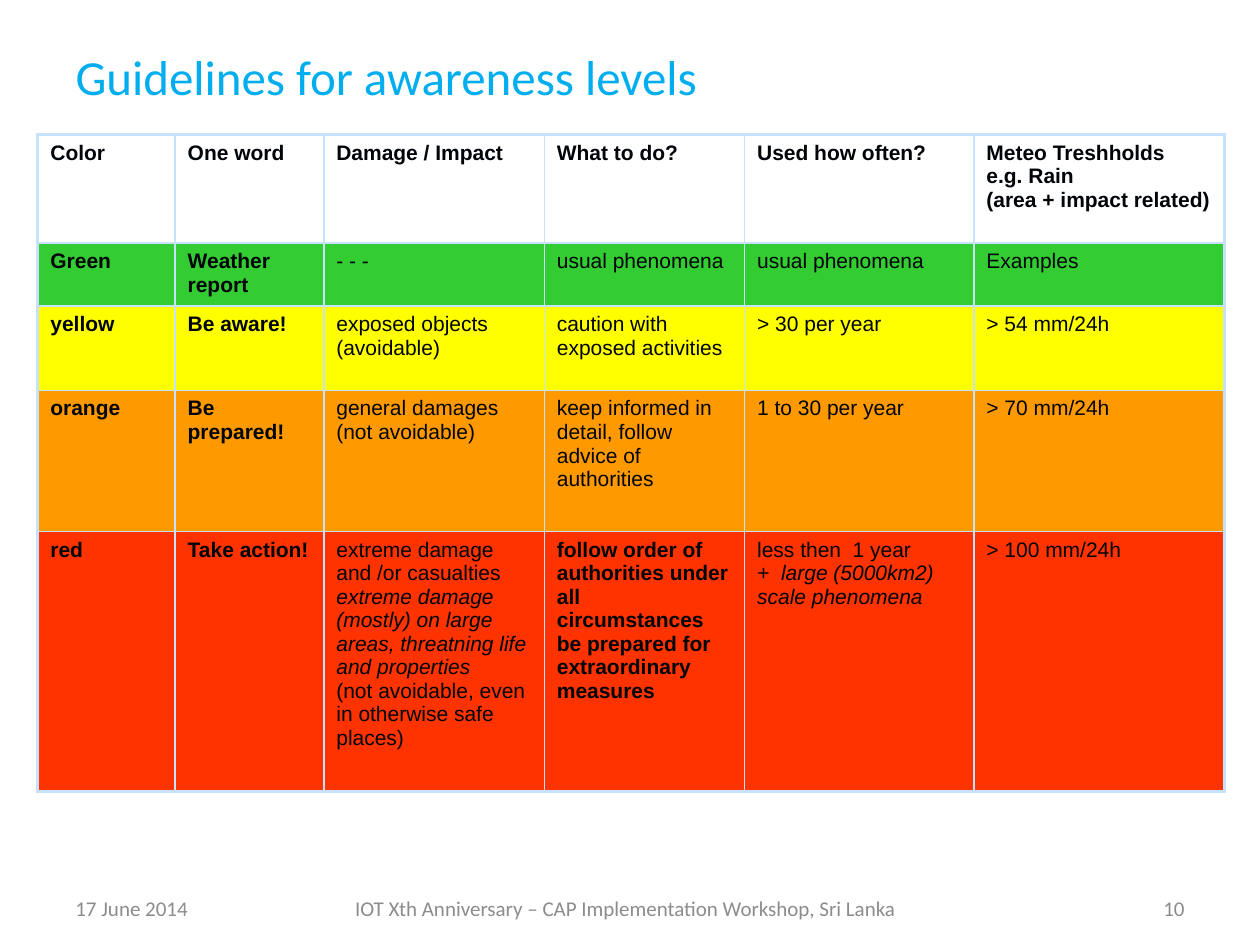
from lxml import etree
from pptx import Presentation
from pptx.dml.color import RGBColor
from pptx.enum.text import MSO_ANCHOR, PP_ALIGN
from pptx.oxml.ns import qn
from pptx.util import Inches, Pt

LEFT, CENTER, RIGHT = PP_ALIGN.LEFT, PP_ALIGN.CENTER, PP_ALIGN.RIGHT
MIDDLE = MSO_ANCHOR.MIDDLE
TITLE_ONLY = 5

MARGIN = 0.5
FOOTER_TOP, FOOTER_HEIGHT = 7.06, 0.29
FOOTERS = [
    (MARGIN, 1.27, "17 June 2014", LEFT),
    (2.01, 5.91, "IOT Xth Anniversary – CAP Implementation Workshop, Sri Lanka", CENTER),
    (8.15, 1.35, "10", RIGHT),
]

TABLE_LEFT, TABLE_TOP = 0.3, 1.07
COLUMN_WIDTHS = [1.09, 1.18, 1.75, 1.59, 1.82, 1.99]
ROW_HEIGHTS = [0.86, 0.49, 0.67, 1.12, 2.06]
ROW_FILLS = [None, "33CC33", "FFFF00", "FF9900", "FF3300"]
BORDER = "C7E2FF"

# Each line of a cell is one paragraph.
CELLS = [
    ["Color", "One word", "Damage / Impact", "What to do?", "Used how often?",
     "Meteo Treshholds\ne.g. Rain\n(area + impact related)"],
    ["Green", "Weather report", "- - -", "usual phenomena", "usual phenomena", "Examples"],
    ["yellow", "Be aware!", "exposed objects\n(avoidable)",
     "caution with exposed activities", "> 30 per year", "> 54 mm/24h"],
    ["orange", "Be prepared!", "general damages\n(not avoidable)",
     "keep informed in detail, follow advice of authorities",
     "1 to 30 per year", "> 70 mm/24h"],
    ["red", "Take action!",
     "extreme damage and /or casualties\n"
     "extreme damage (mostly) on large areas, threatning life and properties\n"
     "(not avoidable, even in otherwise safe places)",
     "follow order of authorities under all circumstances\n"
     "be prepared for extraordinary measures",
     "less then  1 year\n+  large (5000km2) scale phenomena", "> 100 mm/24h"],
]
BOLD_CELL = (4, 3)
ITALIC_PARAGRAPHS = {(4, 2, 1), (4, 4, 1)}


def color(hex_string):
    return RGBColor.from_string(hex_string)


def format_paragraph(paragraph, name, size, hex_color, bold=False, italic=False):
    font = paragraph.font
    font.name, font.size = name, Pt(size)
    font.color.rgb = color(hex_color)
    font.bold, font.italic = bold, italic


def add_title(slide, text):
    title = slide.shapes.title
    title.left, title.top = Inches(MARGIN), Inches(0.22)
    title.width, title.height = Inches(8.99), Inches(0.77)
    frame = title.text_frame
    frame.text, frame.vertical_anchor = text, MIDDLE
    frame.paragraphs[0].alignment = LEFT
    format_paragraph(frame.paragraphs[0], "Calibri", 28, "00AEEF")


def add_footer(slide, left, width, text, alignment):
    box = slide.shapes.add_textbox(
        Inches(left), Inches(FOOTER_TOP), Inches(width), Inches(FOOTER_HEIGHT))
    frame = box.text_frame
    frame.word_wrap, frame.vertical_anchor = True, MIDDLE
    frame.text = text
    frame.paragraphs[0].alignment = alignment
    format_paragraph(frame.paragraphs[0], "Calibri", 12, "8C8C8C")


def set_borders(cell, outer_sides):
    """Draw all four sides, twice as thick where the cell meets the table's edge."""
    properties = cell._tc.get_or_add_tcPr()
    for side in "LRTB":
        width = Pt(2 if side in outer_sides else 1)
        line = etree.SubElement(properties, qn(f"a:ln{side}"), w=str(width))
        fill = etree.SubElement(line, qn("a:solidFill"))
        etree.SubElement(fill, qn("a:srgbClr"), val=BORDER)


def fill_cell(cell, row, column):
    at_edge = {"L": column == 0, "R": column == len(COLUMN_WIDTHS) - 1,
               "T": row == 0, "B": row == len(ROW_HEIGHTS) - 1}
    set_borders(cell, [side for side, outer in at_edge.items() if outer])
    if ROW_FILLS[row]:
        cell.fill.solid()
        cell.fill.fore_color.rgb = color(ROW_FILLS[row])
    else:
        cell.fill.background()
    cell.text_frame.text = CELLS[row][column]
    bold = row == 0 or column < 2 or (row, column) == BOLD_CELL
    for index, paragraph in enumerate(cell.text_frame.paragraphs):
        italic = (row, column, index) in ITALIC_PARAGRAPHS
        format_paragraph(paragraph, "Arial", 12, "000408", bold, italic)


def add_awareness_table(slide):
    table = slide.shapes.add_table(
        len(ROW_HEIGHTS), len(COLUMN_WIDTHS), Inches(TABLE_LEFT), Inches(TABLE_TOP),
        Inches(sum(COLUMN_WIDTHS)), Inches(sum(ROW_HEIGHTS))).table
    table.first_row = table.horz_banding = False
    for column, width in zip(table.columns, COLUMN_WIDTHS):
        column.width = Inches(width)
    for row, height in enumerate(ROW_HEIGHTS):
        table.rows[row].height = Inches(height)
        for column in range(len(COLUMN_WIDTHS)):
            fill_cell(table.cell(row, column), row, column)


def main():
    presentation = Presentation()
    presentation.slide_width, presentation.slide_height = Inches(10), Inches(7.5)
    slide = presentation.slides.add_slide(presentation.slide_layouts[TITLE_ONLY])
    add_title(slide, "Guidelines for awareness levels")
    for footer in FOOTERS:
        add_footer(slide, *footer)
    add_awareness_table(slide)
    presentation.save("out.pptx")


if __name__ == "__main__":
    main()
